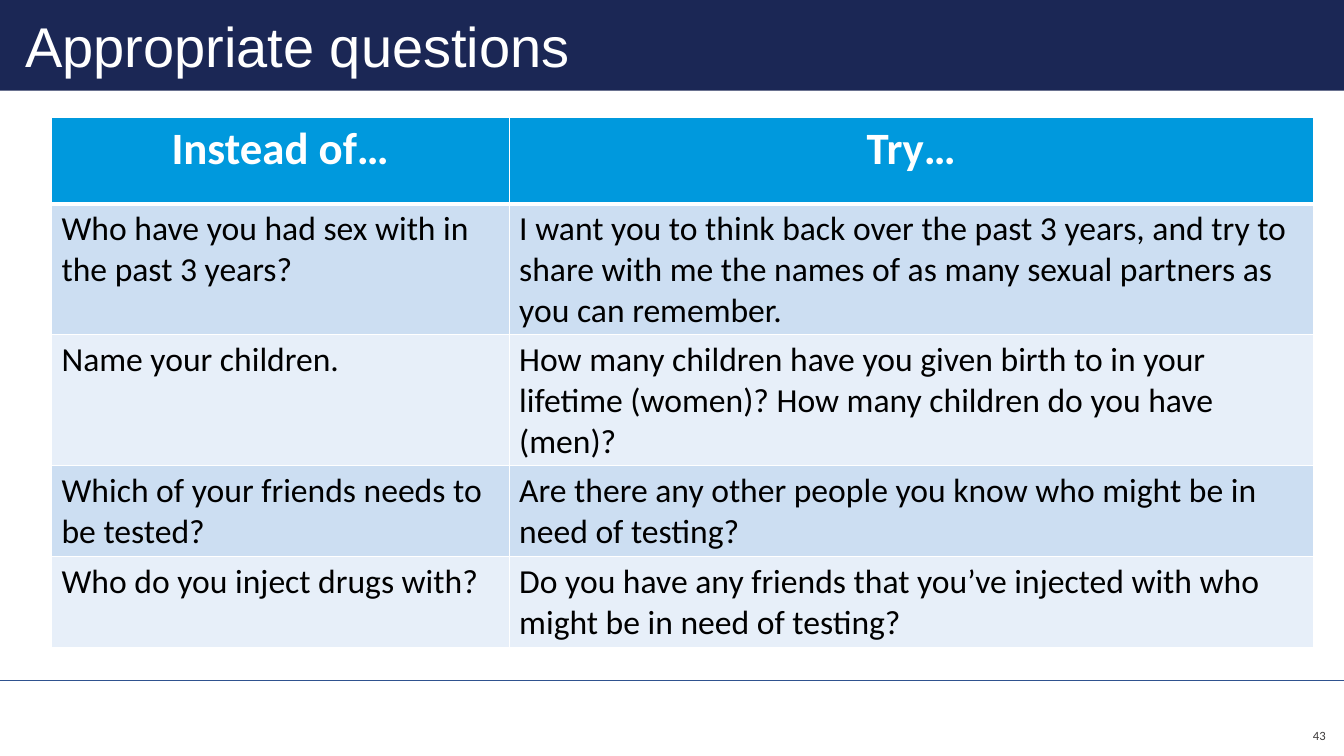
from lxml import etree
from pptx import Presentation
from pptx.dml.color import RGBColor
from pptx.enum.shapes import MSO_CONNECTOR, MSO_SHAPE
from pptx.enum.text import MSO_ANCHOR, PP_ALIGN
from pptx.oxml import parse_xml
from pptx.oxml.ns import qn
from pptx.util import Pt

RECT = MSO_SHAPE.RECTANGLE
LINE = MSO_CONNECTOR.STRAIGHT
TOP, MIDDLE = MSO_ANCHOR.TOP, MSO_ANCHOR.MIDDLE
LEFT, CENTER, RIGHT = PP_ALIGN.LEFT, PP_ALIGN.CENTER, PP_ALIGN.RIGHT

WIDTH, HEIGHT = 960, 540
NAVY, BLUE, WHITE, BLACK = "1B2755", "0099DD", "FFFFFF", "000000"
BANDS = ["CCDEF2", "E7EFF9"]
COLS = [326.9, 574.5]
ROWS = [62, 93.6, 93.6, 64.8, 64.8]
PAIRS = [
    ("Instead of…", "Try…"),
    ("Who have you had sex with in the past 3 years?",
     "I want you to think back over the past 3 years, and try to share with me "
     "the names of as many sexual partners as you can remember."),
    ("Name your children.",
     "How many children have you given birth to in your lifetime (women)? "
     "How many children do you have (men)?"),
    ("Which of your friends needs to be tested?",
     "Are there any other people you know who might be in need of testing?"),
    ("Who do you inject drugs with?",
     "Do you have any friends that you’ve injected with who might be in need of testing?"),
]


def color(code):
    return RGBColor.from_string(code)


def write(frame, text, size=24, font="Calibri", ink=BLACK, bold=False, align=LEFT):
    para = frame.paragraphs[0]
    para.alignment = align
    run = para.add_run()
    run.text = text
    run.font.size = Pt(size)
    run.font.name = font
    run.font.bold = bold
    run.font.color.rgb = color(ink)


def add_text(slide, text, box, inset=None, anchor=TOP, **style):
    frame = slide.shapes.add_textbox(*map(Pt, box)).text_frame
    frame.word_wrap = True
    frame.vertical_anchor = anchor
    if inset is not None:
        frame.margin_left = frame.margin_right = Pt(inset)
        frame.margin_top = frame.margin_bottom = Pt(inset)
    write(frame, text, **style)


def add_bar(slide, box, fill):
    bar = slide.shapes.add_shape(RECT, *map(Pt, box))
    bar.shadow.inherit = False
    bar.fill.solid()
    bar.fill.fore_color.rgb = color(fill)
    bar.line.fill.background()


def add_rule(slide, top, ink, width):
    rule = slide.shapes.add_connector(LINE, Pt(0), Pt(top), Pt(WIDTH), Pt(top))
    rule.line.color.rgb = color(ink)
    rule.line.width = Pt(width)
    etree.SubElement(rule.element.spPr, qn("a:effectLst"))


def set_edges(cell, top, bottom):
    """Draw white cell borders; top and bottom are widths in points."""
    props = cell._tc.get_or_add_tcPr()
    widths = {"lnL": 1, "lnR": 1, "lnT": top, "lnB": bottom}
    for spot, (tag, width) in enumerate(widths.items()):
        props.insert(spot, parse_xml(
            f'<a:{tag} xmlns:a="http://schemas.openxmlformats.org/drawingml/2006/main"'
            f' w="{Pt(width)}"><a:solidFill><a:srgbClr val="{WHITE}"/>'
            f'</a:solidFill></a:{tag}>'))


def add_grid(slide, left, top):
    shape = slide.shapes.add_table(len(ROWS), len(COLS), Pt(left), Pt(top),
                                   Pt(sum(COLS)), Pt(sum(ROWS)))
    table = shape.table
    for col, width in zip(table.columns, COLS):
        col.width = Pt(width)
    for r, pair in enumerate(PAIRS):
        table.rows[r].height = Pt(ROWS[r])
        head = r == 0
        style = dict(size=32, ink=WHITE, bold=True, align=CENTER) if head else {}
        for c, text in enumerate(pair):
            cell = table.cell(r, c)
            cell.fill.solid()
            cell.fill.fore_color.rgb = color(BLUE if head else BANDS[(r - 1) % 2])
            set_edges(cell, 3 if r == 1 else 1, 3 if head else 1)
            write(cell.text_frame, text, **style)


def main():
    deck = Presentation()
    deck.slide_width, deck.slide_height = Pt(WIDTH), Pt(HEIGHT)
    slide = deck.slides.add_slide(deck.slide_layouts[6])
    add_bar(slide, (0, 0, WIDTH, 64.8), NAVY)
    add_text(slide, "43", (908, 511.2, 46, 28.8), anchor=MIDDLE,
             size=9, ink="3B3838", align=RIGHT)
    add_rule(slide, 486, "2F528F", 0.5)
    add_text(slide, "Appropriate questions", (18, 8, 921, 48), inset=0,
             size=40, font="Arial", ink=WHITE)
    add_grid(slide, 36.8, 83.5)
    deck.save("out.pptx")


if __name__ == "__main__":
    main()
